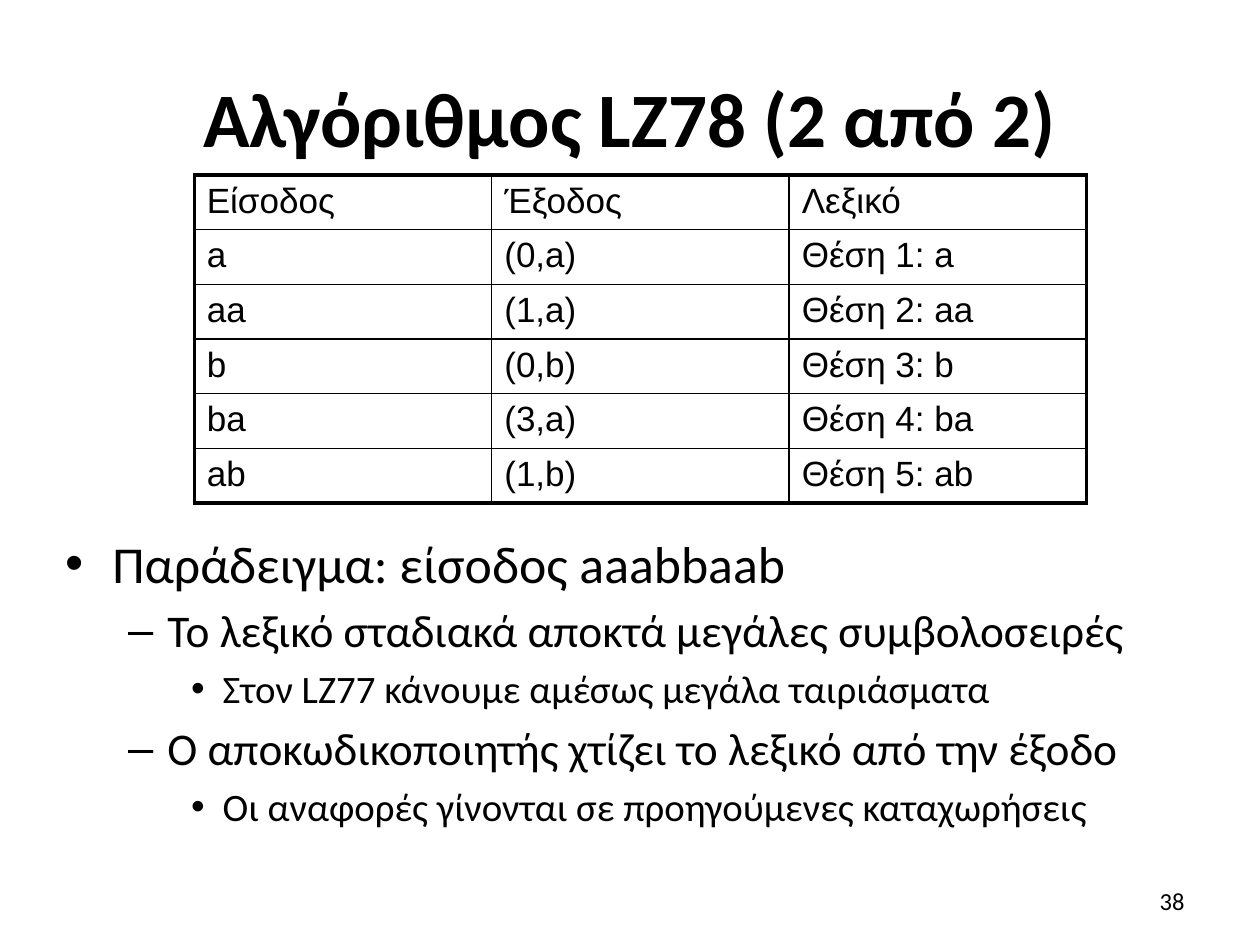
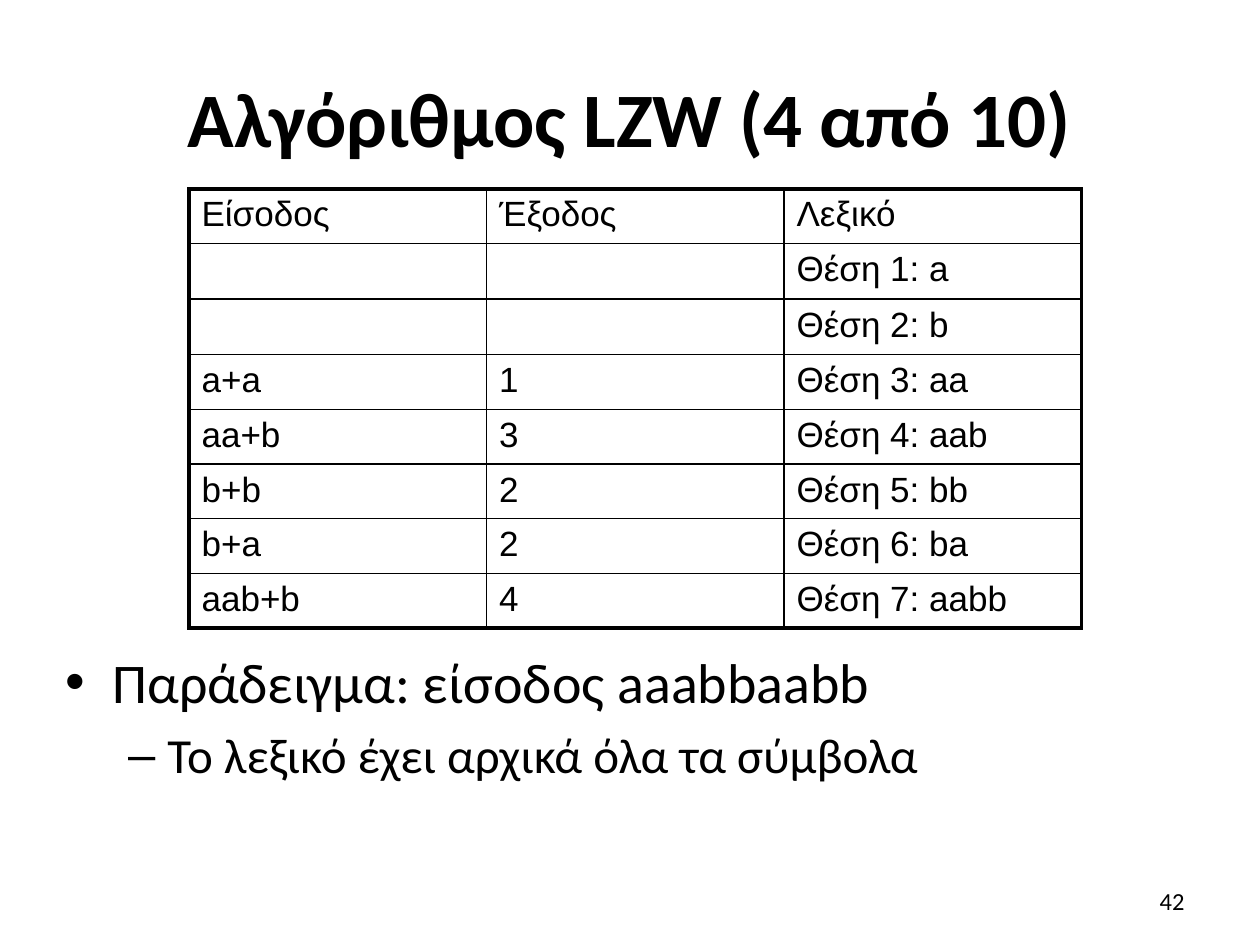
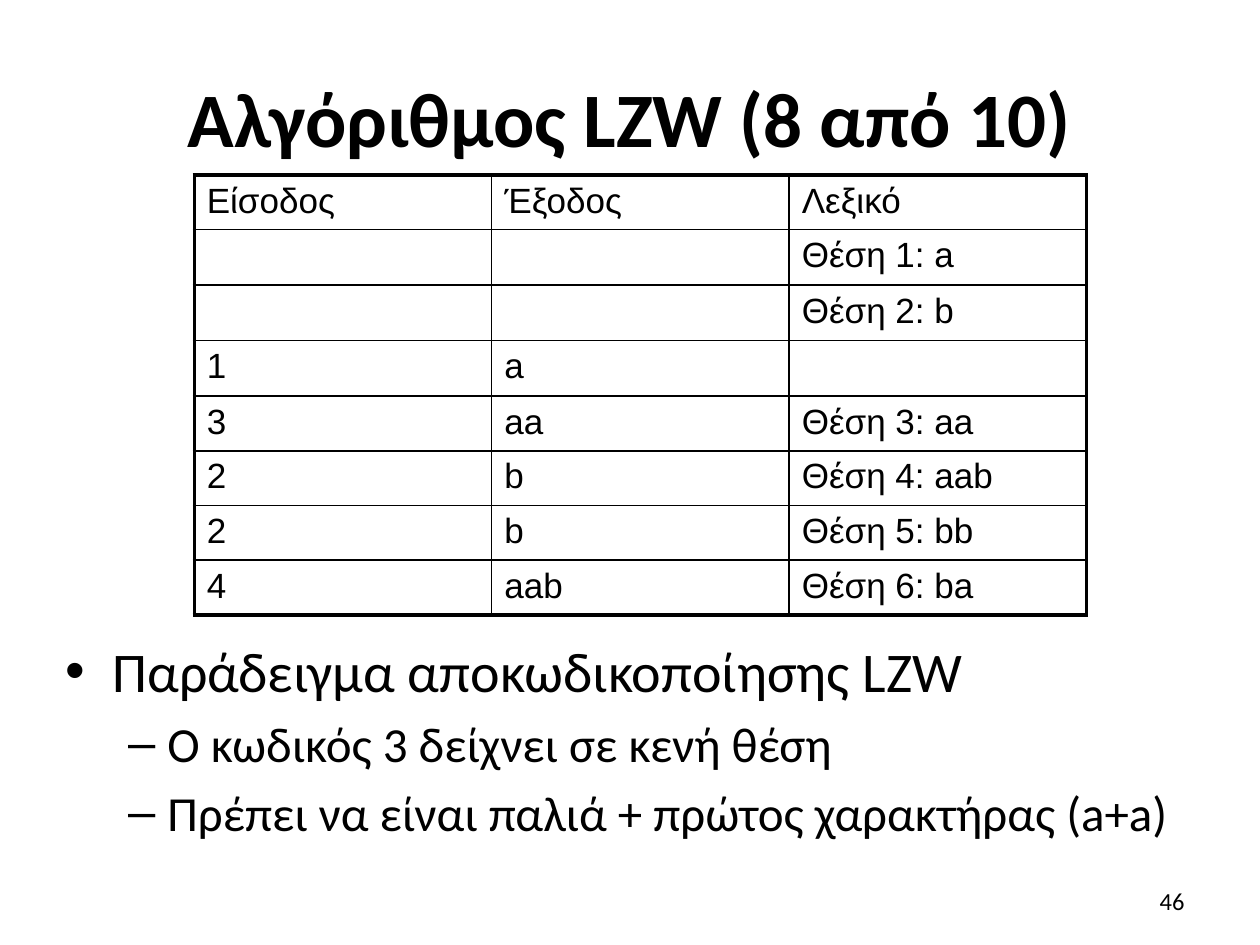
from lxml.etree import SubElement
from pptx import Presentation
from pptx.dml.color import RGBColor
from pptx.enum.text import MSO_ANCHOR as Anchor, MSO_AUTO_SIZE as AutoSize, PP_ALIGN as Align
from pptx.oxml.ns import qn
from pptx.util import Pt

BLACK = RGBColor(0x00, 0x00, 0x00)
TEXT_FONT = "Calibri"
TABLE_FONT = "Arial"
COLUMN_WIDTH = 170
ROW_HEIGHT = 31.25
OUTER_LINE = 2.25
INNER_LINE = 1
BODY_BOTTOM = 504
HEADER = ("Είσοδος", "Έξοδος", "Λεξικό")

SLIDES = [
    {
        "title": "Αλγόριθμος LZ78 (2 από 2)",
        "number": "38",
        "table_at": (111, 100),
        "rows": [
            ("a", "(0,a)", "Θέση 1: a"),
            ("aa", "(1,a)", "Θέση 2: aa"),
            ("b", "(0,b)", "Θέση 3: b"),
            ("ba", "(3,a)", "Θέση 4: ba"),
            ("ab", "(1,b)", "Θέση 5: ab"),
        ],
        "body_top": 300,
        "sizes": (29.6, 25.9, 22.2),
        "bullets": [
            (0, "Παράδειγμα: είσοδος aaabbaab"),
            (1, "Το λεξικό σταδιακά αποκτά μεγάλες συμβολοσειρές"),
            (2, "Στον LZ77 κάνουμε αμέσως μεγάλα ταιριάσματα"),
            (1, "Ο αποκωδικοποιητής χτίζει το λεξικό από την έξοδο"),
            (2, "Οι αναφορές γίνονται σε προηγούμενες καταχωρήσεις"),
        ],
    },
    {
        "title": "Αλγόριθμος LZW (4 από 10)",
        "number": "42",
        "table_at": (108, 108),
        "rows": [
            ("", "", "Θέση 1: a"),
            ("", "", "Θέση 2: b"),
            ("a+a", "1", "Θέση 3: aa"),
            ("aa+b", "3", "Θέση 4: aab"),
            ("b+b", "2", "Θέση 5: bb"),
            ("b+a", "2", "Θέση 6: ba"),
            ("aab+b", "4", "Θέση 7: aabb"),
        ],
        "body_top": 366.5,
        "sizes": (32, 28),
        "bullets": [
            (0, "Παράδειγμα: είσοδος aaabbaabb"),
            (1, "Το λεξικό έχει αρχικά όλα τα σύμβολα"),
        ],
    },
    {
        "title": "Αλγόριθμος LZW (8 από 10)",
        "number": "46",
        "table_at": (111, 100),
        "rows": [
            ("", "", "Θέση 1: a"),
            ("", "", "Θέση 2: b"),
            ("1", "a", ""),
            ("3", "aa", "Θέση 3: aa"),
            ("2", "b", "Θέση 4: aab"),
            ("2", "b", "Θέση 5: bb"),
            ("4", "aab", "Θέση 6: ba"),
        ],
        "body_top": 360,
        "sizes": (32, 28),
        "bullets": [
            (0, "Παράδειγμα αποκωδικοποίησης LZW"),
            (1, "Ο κωδικός 3 δείχνει σε κενή θέση"),
            (1, "Πρέπει να είναι παλιά + πρώτος χαρακτήρας (a+a)"),
        ],
    },
]


def style(paragraph, size, name=TEXT_FONT, bold=False):
    paragraph.font.size = Pt(size)
    for span in paragraph.runs:
        span.font.size = Pt(size)
        span.font.name = name
        span.font.bold = bold
        span.font.color.rgb = BLACK


def add_borders(cell, outer_sides):
    properties = cell._tc.get_or_add_tcPr()
    for side in "LRTB":
        width = OUTER_LINE if side in outer_sides else INNER_LINE
        line = SubElement(properties, qn(f"a:ln{side}"), w=str(Pt(width)))
        fill = SubElement(line, qn("a:solidFill"))
        SubElement(fill, qn("a:srgbClr"), val=str(BLACK))


deck = Presentation()
deck.slide_width, deck.slide_height = Pt(720), Pt(540)

for content in SLIDES:
    page = deck.slides.add_slide(deck.slide_layouts[1])

    title = page.shapes.title
    title.left, title.top, title.width, title.height = Pt(36), Pt(21.6), Pt(648), Pt(90)
    title.text_frame.text = content["title"]
    title.text_frame.vertical_anchor = Anchor.MIDDLE
    title.text_frame.auto_size = AutoSize.NONE
    title.text_frame.paragraphs[0].alignment = Align.CENTER
    style(title.text_frame.paragraphs[0], 44, bold=True)

    body = page.placeholders[1]
    body_top = content["body_top"]
    body.left, body.top = Pt(30), Pt(body_top)
    body.width, body.height = Pt(660), Pt(BODY_BOTTOM - body_top)
    body.text_frame.text = "\n".join(text for level, text in content["bullets"])
    body.text_frame.auto_size = AutoSize.NONE
    for paragraph, (level, text) in zip(body.text_frame.paragraphs, content["bullets"]):
        paragraph.level = level
        style(paragraph, content["sizes"][level])
    body.text_frame.paragraphs[0].space_before = Pt(0)

    rows = [HEADER, *content["rows"]]
    left, top = content["table_at"]
    table = page.shapes.add_table(
        len(rows), len(HEADER), Pt(left), Pt(top),
        Pt(COLUMN_WIDTH * len(HEADER)), Pt(ROW_HEIGHT * len(rows)),
    ).table
    table.first_row = False
    table.horz_banding = False
    for row_index, row in enumerate(rows):
        for column_index, text in enumerate(row):
            cell = table.cell(row_index, column_index)
            cell.text_frame.text = text
            style(cell.text_frame.paragraphs[0], 20, TABLE_FONT)
            outer_sides = ""
            outer_sides += "T" if row_index == 0 else ""
            outer_sides += "B" if row_index == len(rows) - 1 else ""
            outer_sides += "L" if column_index == 0 else ""
            outer_sides += "R" if column_index == len(HEADER) - 1 else ""
            add_borders(cell, outer_sides)
            cell.fill.background()

    number_box = page.shapes.add_textbox(Pt(516), Pt(500.5), Pt(168), Pt(28.75))
    number_box.text_frame.word_wrap = True
    number_box.text_frame.vertical_anchor = Anchor.MIDDLE
    number_box.text_frame.text = content["number"]
    number_box.text_frame.paragraphs[0].alignment = Align.RIGHT
    style(number_box.text_frame.paragraphs[0], 14)

deck.save("out.pptx")
